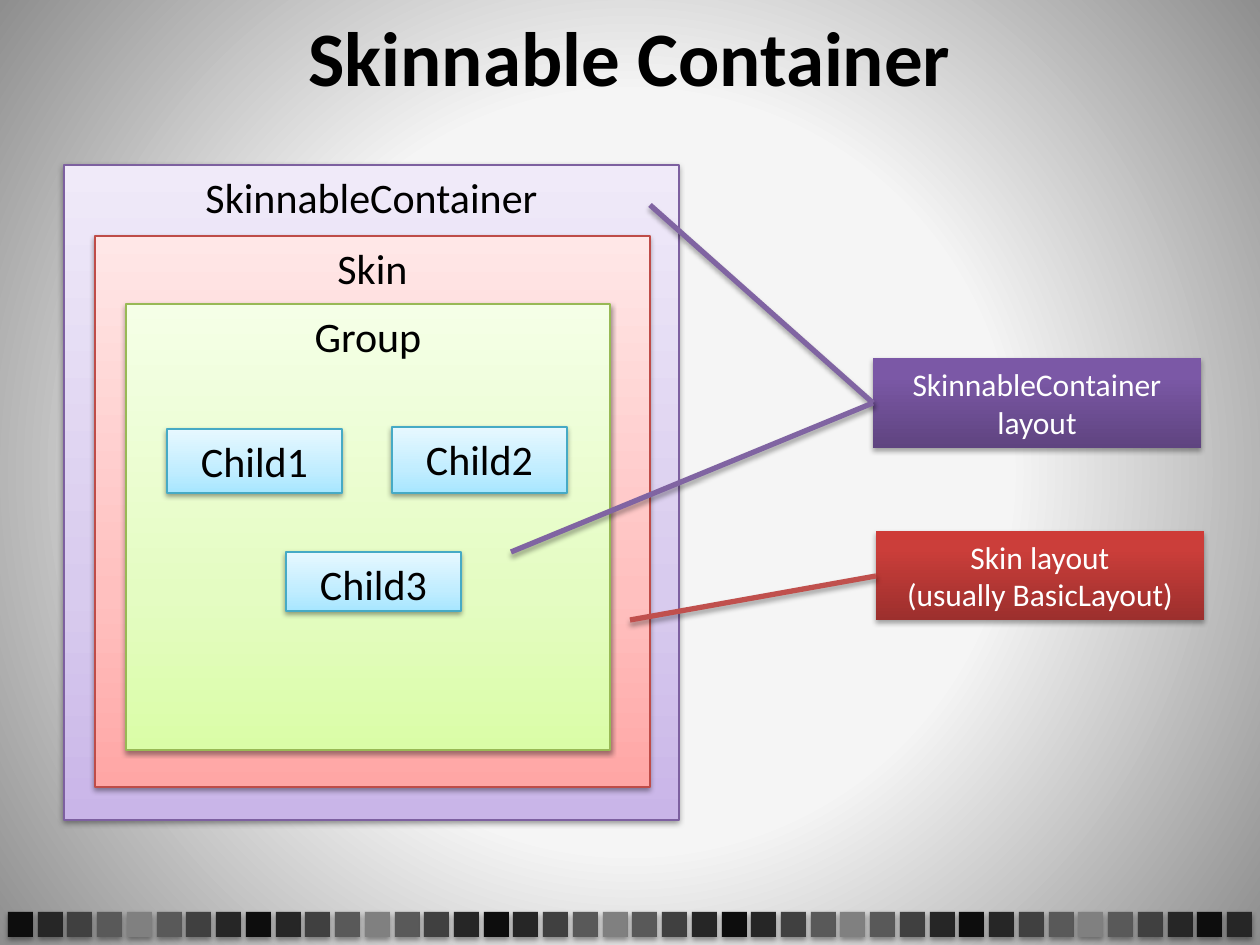
import itertools
from dataclasses import dataclass

import pptx
import pptx.dml.color
import pptx.enum.shapes
import pptx.enum.text
import pptx.oxml
import pptx.oxml.ns
import pptx.util

PX = 914400 / 126
FONT = "Calibri"
ANCHOR = pptx.enum.text.MSO_ANCHOR
SQUARE_COLORS = ["0D0D0D", "262626", "404040", "595959",
                 "808080", "595959", "404040", "262626"]
SQUARE_COUNT = 42
FIRST_LEFT, LAST_LEFT = 8, 1227


@dataclass(frozen=True)
class Shadow:
    opacity: int
    distance: float


SOFT = Shadow(38, 1.6)
STRONG = Shadow(35, 1.8)


@dataclass(frozen=True)
class Theme:
    stops: dict[int, str]
    line: str | None = None
    text: str = "000000"
    size: int = 24
    anchor: ANCHOR = ANCHOR.TOP
    shadow: Shadow = SOFT


@dataclass(frozen=True)
class Box:
    text: str
    left: int
    top: int
    width: int
    height: int
    theme: Theme


@dataclass(frozen=True)
class Link:
    start: tuple[int, int]
    end: tuple[int, int]
    color: str


PURPLE = Theme({0: "C9B5E8", 35: "D8CBEE", 100: "F0EAF9"}, "7D60A0")
RED = Theme({0: "FFA6A5", 35: "FFC0BF", 100: "FFE7E7"}, "BF4C48")
GREEN = Theme({0: "DAFDA7", 35: "E4FCC2", 100: "F5FFE7"}, "98B955")
BLUE = Theme({0: "A7E6FF", 35: "C1EDFF", 100: "E7F8FF"}, "46AAC5")
DARK_PURPLE = Theme({0: "5F4480", 80: "7B58A6", 100: "7C57A8"},
                    None, "FFFFFF", 18, ANCHOR.MIDDLE, STRONG)
DARK_RED = Theme({0: "9C2F2D", 80: "CB3E3A", 100: "CE3B37"},
                 None, "FFFFFF", 18, ANCHOR.MIDDLE, STRONG)

BOXES = [
    Box("SkinnableContainer", 64, 165, 615, 655, PURPLE),
    Box("Skin", 95, 236, 555, 551, RED),
    Box("Group", 126, 304, 484, 446, GREEN),
    Box("Child1", 167, 429, 175, 64, BLUE),
    Box("Child2", 392, 427, 175, 66, BLUE),
    Box("Child3", 286, 552, 175, 59, BLUE),
    Box("SkinnableContainer layout", 873, 358, 328, 90, DARK_PURPLE),
    Box("Skin layout\n(usually BasicLayout)", 876, 531, 328, 89, DARK_RED),
]
LINKS = [
    Link((650, 205), (873, 403), "8064A2"),
    Link((511, 552), (873, 403), "8064A2"),
    Link((630, 620), (876, 576), "C0504D"),
]


def emu(pixels: int) -> int:
    return round(pixels * PX)


def rgb(color: str) -> pptx.dml.color.RGBColor:
    return pptx.dml.color.RGBColor.from_string(color)


def set_gradient(fill, owner, stops: dict[int, str], direction: str) -> None:
    """Give fill, which lies inside the owner element, any number of stops."""
    fill.gradient()
    stop_xml = "".join(
        f'<a:gs pos="{position * 1000}"><a:srgbClr val="{color}"/></a:gs>'
        for position, color in stops.items())
    gradient = pptx.oxml.parse_xml(
        f'<a:gradFill {pptx.oxml.ns.nsdecls("a")} rotWithShape="1">'
        f"<a:gsLst>{stop_xml}</a:gsLst>{direction}</a:gradFill>")
    old = next(owner.iter(pptx.oxml.ns.qn("a:gradFill")))
    old.getparent().replace(old, gradient)


def add_shadow(shape, shadow: Shadow) -> None:
    """Append the shadow last, after the fill and line are set."""
    shape.element.spPr.append(pptx.oxml.parse_xml(
        f'<a:effectLst {pptx.oxml.ns.nsdecls("a")}>'
        f'<a:outerShdw blurRad="{pptx.util.Pt(3.1)}" '
        f'dist="{pptx.util.Pt(shadow.distance)}" dir="5400000" rotWithShape="0">'
        f'<a:srgbClr val="000000"><a:alpha val="{shadow.opacity * 1000}"/>'
        "</a:srgbClr></a:outerShdw></a:effectLst>"))


def write_text(shape, text: str, *, size: int, color: str = "000000",
               bold: bool = False, anchor: ANCHOR = ANCHOR.MIDDLE) -> None:
    frame = shape.text_frame
    frame.word_wrap = True
    frame.vertical_anchor = anchor
    frame.text = text
    for paragraph in frame.paragraphs:
        paragraph.alignment = pptx.enum.text.PP_ALIGN.CENTER
        font = paragraph.runs[0].font
        font.name = FONT
        font.size = pptx.util.Pt(size)
        font.bold = bold
        font.color.rgb = rgb(color)


def add_rectangle(slide, left: int, top: int, width: int, height: int):
    return slide.shapes.add_shape(
        pptx.enum.shapes.MSO_SHAPE.RECTANGLE, *map(emu, (left, top, width, height)))


def add_square(slide, left: int, color: str) -> None:
    square = add_rectangle(slide, left, 912, 25, 25)
    square.fill.solid()
    square.fill.fore_color.rgb = rgb(color)
    square.line.fill.background()
    add_shadow(square, SOFT)


def add_box(slide, box: Box) -> None:
    theme = box.theme
    shape = add_rectangle(slide, box.left, box.top, box.width, box.height)
    set_gradient(shape.fill, shape.element, theme.stops,
                 '<a:lin ang="16200000" scaled="0"/>')
    if theme.line:
        shape.line.color.rgb = rgb(theme.line)
        shape.line.width = pptx.util.Pt(0.75)
    else:
        shape.line.fill.background()
    add_shadow(shape, theme.shadow)
    write_text(shape, box.text, size=theme.size, color=theme.text,
               anchor=theme.anchor)


def add_link(slide, link: Link) -> None:
    connector = slide.shapes.add_connector(
        pptx.enum.shapes.MSO_CONNECTOR.STRAIGHT,
        *map(emu, link.start + link.end))
    connector.line.color.rgb = rgb(link.color)
    connector.line.width = pptx.util.Pt(3)
    add_shadow(connector, STRONG)


def main() -> None:
    presentation = pptx.Presentation()
    presentation.slide_width = emu(1260)
    presentation.slide_height = emu(945)
    slide = presentation.slides.add_slide(presentation.slide_layouts[6])
    set_gradient(
        slide.background.fill, slide.element, {48: "F5F5F5", 100: "8E8E8E"},
        '<a:path path="circle">'
        '<a:fillToRect l="50000" t="50000" r="50000" b="50000"/></a:path>')

    pitch = (LAST_LEFT - FIRST_LEFT) / (SQUARE_COUNT - 1)
    colors = itertools.cycle(SQUARE_COLORS)
    for index, color in zip(range(SQUARE_COUNT), colors):
        add_square(slide, round(FIRST_LEFT + index * pitch), color)

    title = slide.shapes.add_textbox(*map(emu, (0, -4, 1260, 120)))
    write_text(title, "Skinnable Container", size=44, bold=True)
    for box in BOXES:
        add_box(slide, box)
    for link in LINKS:
        add_link(slide, link)
    presentation.save("out.pptx")


if __name__ == "__main__":
    main()
